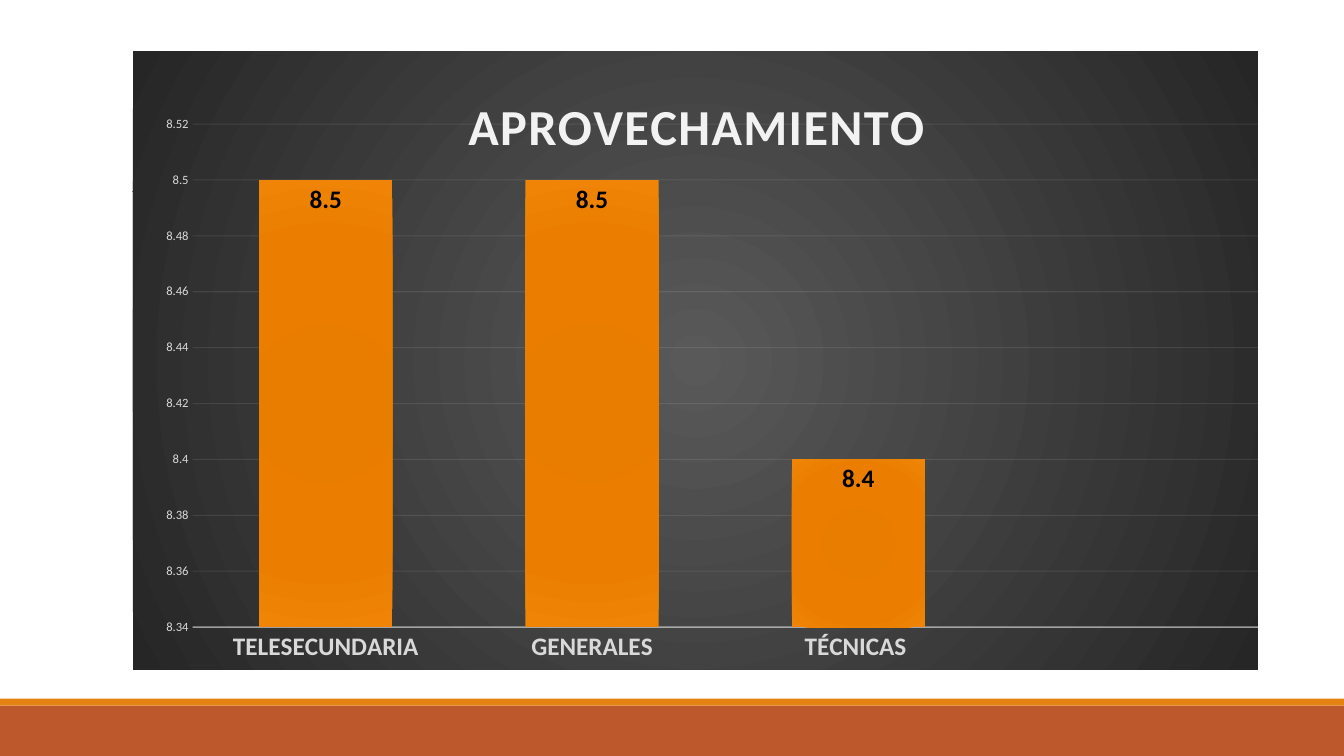
import dataclasses
import typing

import lxml.etree
import pptx
import pptx.chart.data
import pptx.dml.color
import pptx.enum.chart
import pptx.enum.shapes
import pptx.oxml
import pptx.oxml.ns
import pptx.util

Pt = pptx.util.Pt
qn = pptx.oxml.ns.qn
Stops = tuple[tuple[int, str], ...]


@dataclasses.dataclass(frozen=True)
class Theme:
    font: str = "Calibri"
    rust: str = "BD582C"
    orange: str = "E48312"
    rule: str = "808080"
    light: str = "F2F2F2"
    label: str = "D9D9D9"
    black: str = "000000"
    panel: Stops = ((0, "595959"), (100, "262626"))
    column: Stops = ((0, "E57B00"), (34, "E87D00"), (70, "EB7E00"), (100, "EF8407"))
    title_size: float = 36
    category_size: float = 18
    base_size: float = 10
    scale_size: float = 9


@dataclasses.dataclass(frozen=True)
class Band:
    top: float
    height: float
    color: str


THEME = Theme()
PAGE_WIDTH, PAGE_HEIGHT = 960, 540
BANDS = (Band(504, 36, THEME.rust), Band(499, 5, THEME.orange))
SCORES = {"TELESECUNDARIA": 8.5, "GENERALES": 8.5, "TÉCNICAS ": 8.4, "": None}


def rgb(color: str) -> pptx.dml.color.RGBColor:
    return pptx.dml.color.RGBColor.from_string(color)


def style_font(font: typing.Any, *, size: float, color: str, bold: bool = False) -> None:
    font.name = THEME.font
    font.size = Pt(size)
    font.bold = bold
    font.color.rgb = rgb(color)


def add_title_text(frame: typing.Any, text: str, *, size: float, color: str,
                   bold: bool = True, spacing: int = 100) -> None:
    span = frame.paragraphs[0].add_run()
    span.text = text
    style_font(span.font, size=size, color=color, bold=bold)
    span.font._element.set("spc", str(spacing))


def style_line(line: typing.Any, *, color: str, width: float, opacity: int = 100) -> None:
    line.width = Pt(width)
    line.color.rgb = rgb(color)
    if opacity < 100:
        shade = line._ln.find(".//" + qn("a:srgbClr"))
        lxml.etree.SubElement(shade, qn("a:alpha"), val=str(opacity * 1000))


def radial_fill(area: typing.Any, stops: Stops, focus: int) -> None:
    area.fill.solid()
    marks = "".join(
        f'<a:gs pos="{place * 1000}"><a:srgbClr val="{color}"/></a:gs>'
        for place, color in stops
    )
    edges = " ".join(f'{side}="{focus * 1000}"' for side in "ltrb")
    gradient = pptx.oxml.parse_xml(
        f'<a:gradFill {pptx.oxml.ns.nsdecls("a")} rotWithShape="1"><a:gsLst>{marks}</a:gsLst>'
        f'<a:path path="circle"><a:fillToRect {edges}/></a:path></a:gradFill>'
    )
    solid = area._element.find(".//" + qn("a:solidFill")) if hasattr(area, "_element") \
        else area.fill._xPr.find(qn("a:solidFill"))
    solid.getparent().replace(solid, gradient)


def make_layout(**values: typing.Any) -> typing.Any:
    parts = "".join(f'<c:{name} val="{value}"/>' for name, value in values.items())
    return pptx.oxml.parse_xml(
        f'<c:layout {pptx.oxml.ns.nsdecls("c")}><c:manualLayout>{parts}'
        "</c:manualLayout></c:layout>"
    )


def drop_layout(holder: typing.Any) -> None:
    for old in holder.findall(qn("c:layout")):
        holder.remove(old)


def add_band(page: typing.Any, band: Band) -> None:
    box = page.shapes.add_shape(pptx.enum.shapes.MSO_SHAPE.RECTANGLE,
                                Pt(0), Pt(band.top), Pt(PAGE_WIDTH), Pt(band.height))
    box.shadow.inherit = False
    box.fill.solid()
    box.fill.fore_color.rgb = rgb(band.color)
    box.line.fill.background()


def add_rule(page: typing.Any) -> None:
    rule = page.shapes.add_connector(pptx.enum.shapes.MSO_CONNECTOR.STRAIGHT,
                                     Pt(94.5), Pt(136.8), Pt(879), Pt(136.8))
    style_line(rule.line, color=THEME.rule, width=0.5)
    lxml.etree.SubElement(rule._element.spPr, qn("a:effectLst"))


def style_title(chart: typing.Any) -> None:
    chart.has_title = True
    title = chart.chart_title
    add_title_text(title.text_frame, "APROVECHAMIENTO",
                   size=THEME.title_size, color=THEME.light)
    root = title._element
    drop_layout(root)
    root.find(qn("c:tx")).addnext(make_layout(xMode="edge", yMode="edge", x=0.29, y=0.05))
    root.find(qn("c:overlay")).set("val", "1")


def style_axes(chart: typing.Any) -> None:
    none = pptx.enum.chart.XL_TICK_MARK.NONE
    categories, scale = chart.category_axis, chart.value_axis
    for axis in (categories, scale):
        axis.major_tick_mark = none
        axis.minor_tick_mark = none
    style_font(categories.tick_labels.font, size=THEME.category_size,
               color=THEME.label, bold=True)
    style_line(categories.format.line, color=THEME.light, width=1, opacity=54)
    style_font(scale.tick_labels.font, size=THEME.scale_size, color=THEME.label)
    scale.minimum_scale, scale.maximum_scale, scale.major_unit = 8.34, 8.52, 0.02
    scale.format.line.fill.background()
    style_line(scale.major_gridlines.format.line, color=THEME.light, width=0.75, opacity=10)


def style_columns(plot: typing.Any) -> None:
    plot.gap_width = 100
    plot.overlap = -24
    plot.vary_by_categories = False
    series = plot.series[0]
    radial_fill(series.format, THEME.column, 100)
    series.format.line.fill.background()
    labels = series.data_labels
    labels.show_value = True
    labels.position = pptx.enum.chart.XL_LABEL_POSITION.INSIDE_END
    style_font(labels.font, size=THEME.category_size, color=THEME.black, bold=True)


def add_score_chart(page: typing.Any) -> None:
    table = pptx.chart.data.CategoryChartData()
    table.categories = list(SCORES)
    table.add_series("Series 1", list(SCORES.values()))
    chart = page.shapes.add_chart(
        pptx.enum.chart.XL_CHART_TYPE.COLUMN_CLUSTERED,
        Pt(95), Pt(36.5), Pt(804), Pt(442), table,
    ).chart
    chart.has_legend = False
    style_font(chart.font, size=THEME.base_size, color=THEME.black)
    style_title(chart)
    style_axes(chart)
    style_columns(chart.plots[0])

    body = chart._chartSpace.find(qn("c:chart"))
    area = body.find(qn("c:plotArea"))
    drop_layout(area)
    area.insert(0, make_layout(layoutTarget="inner", xMode="edge", yMode="edge",
                               x=0.053, y=0.118, w=0.947, h=0.813))
    panel = pptx.oxml.parse_xml(f'<c:spPr {pptx.oxml.ns.nsdecls("c", "a")}>'
                                "<a:ln><a:noFill/></a:ln></c:spPr>")
    body.addnext(panel)
    radial_fill(PanelFormat(panel), THEME.panel, 50)


class PanelFormat:
    def __init__(self, properties: typing.Any) -> None:
        self.fill = pptx.dml.fill.FillFormat.from_fill_parent(properties)


def main() -> None:
    deck = pptx.Presentation()
    deck.slide_width, deck.slide_height = Pt(PAGE_WIDTH), Pt(PAGE_HEIGHT)
    page = deck.slides.add_slide(deck.slide_layouts[6])
    for band in BANDS:
        add_band(page, band)
    add_rule(page)
    add_score_chart(page)
    deck.save("out.pptx")


if __name__ == "__main__":
    main()
